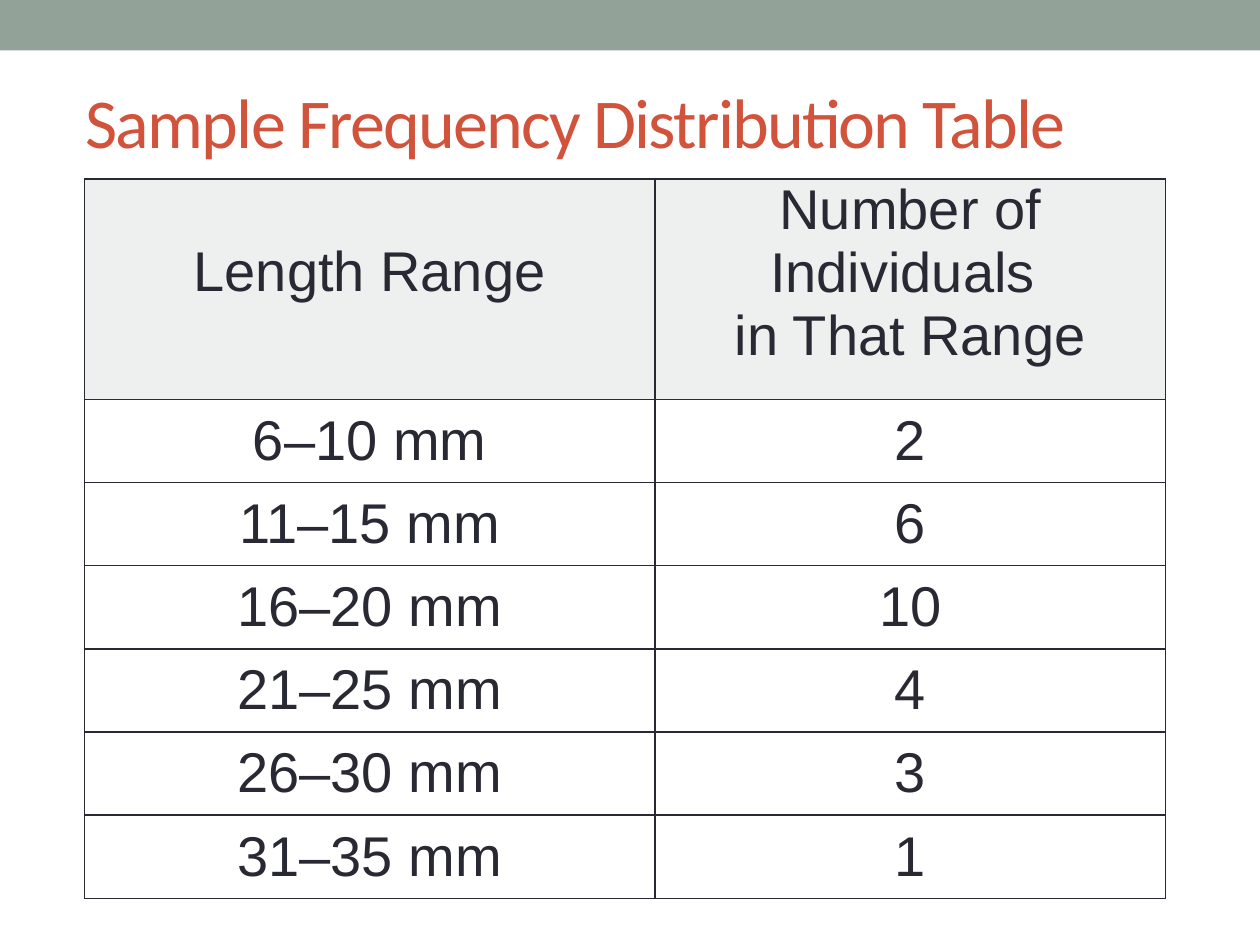
"""Build a slide with a sample frequency distribution table."""
from lxml.etree import SubElement
from pptx import Presentation
from pptx.dml.color import RGBColor
from pptx.enum.shapes import MSO_SHAPE
from pptx.enum.text import MSO_ANCHOR, PP_ALIGN
from pptx.oxml.ns import qn
from pptx.util import Inches, Pt

SAGE = RGBColor(0x93, 0xA2, 0x99)
RUST = RGBColor(0xD2, 0x53, 0x3C)
INK = RGBColor(0x29, 0x29, 0x34)
HEADER_FILL = RGBColor(0xEE, 0xF0, 0xEF)

COLUMNS = [4.53, 4.05]
HEADER_HEIGHT, ROW_HEIGHT = 1.75, 0.66
ROWS = [
    ("Length Range", "Number of Individuals \vin That Range"),
    ("6–10 mm", "2"),
    ("11–15 mm", "6"),
    ("16–20 mm", "10"),
    ("21–25 mm", "4"),
    ("26–30 mm", "3"),
    ("31–35 mm", "1"),
]


def style_font(font, name, size, color):
    font.name, font.size = name, Pt(size)
    font.color.rgb = color


def add_band(s, width, height):
    band = s.shapes.add_shape(MSO_SHAPE.RECTANGLE, 0, 0, width, height)
    band.shadow.inherit = False
    band.fill.solid()
    band.fill.fore_color.rgb = SAGE
    band.line.fill.background()


def add_title(s, text):
    sp = s.shapes.add_textbox(Inches(0.58), Inches(0.5), Inches(8.92), Inches(0.92))
    tf = sp.text_frame
    tf.word_wrap = True
    tf.vertical_anchor = MSO_ANCHOR.MIDDLE
    p = tf.paragraphs[0]
    r = p.add_run()
    r.text = text
    style_font(p.font, "Calibri", 40, RUST)
    r.font._element.set("spc", "-100")


def add_borders(cell):
    tcPr = cell._tc.get_or_add_tcPr()
    for i, side in enumerate(("lnL", "lnR", "lnT", "lnB")):
        ln = tcPr.makeelement(qn(f"a:{side}"), {"w": str(Pt(1))})
        fill = SubElement(ln, qn("a:solidFill"))
        SubElement(fill, qn("a:srgbClr"), val=str(INK))
        tcPr.insert(i, ln)


def fill_cell(cell, text, is_header):
    cell.margin_left = cell.margin_right = Inches(0.07)
    cell.margin_top = cell.margin_bottom = 0
    cell.vertical_anchor = MSO_ANCHOR.TOP if is_header else MSO_ANCHOR.MIDDLE
    if is_header:
        cell.fill.solid()
        cell.fill.fore_color.rgb = HEADER_FILL
    else:
        cell.fill.background()
    cell.text = text
    p = cell.text_frame.paragraphs[0]
    p.alignment = PP_ALIGN.CENTER
    style_font(p.font, "Arial", 32, INK)
    add_borders(cell)


def add_frequency_table(s):
    heights = [HEADER_HEIGHT] + [ROW_HEIGHT] * (len(ROWS) - 1)
    table = s.shapes.add_table(
        len(ROWS), len(COLUMNS), Inches(0.67), Inches(1.42),
        Inches(sum(COLUMNS)), Inches(sum(heights))).table
    for column, width in zip(table.columns, COLUMNS):
        column.width = Inches(width)
    for i, (height, texts) in enumerate(zip(heights, ROWS)):
        table.rows[i].height = Inches(height)
        for j, text in enumerate(texts):
            fill_cell(table.cell(i, j), text, is_header=i == 0)
    table.cell(0, 0).margin_top = Inches(0.49)


def main():
    prs = Presentation()
    prs.slide_width, prs.slide_height = Inches(10), Inches(7.5)
    s = prs.slides.add_slide(prs.slide_layouts[6])
    add_band(s, prs.slide_width, Inches(0.4))
    add_frequency_table(s)
    add_title(s, "Sample Frequency Distribution Table")
    prs.save("out.pptx")


if __name__ == "__main__":
    main()
